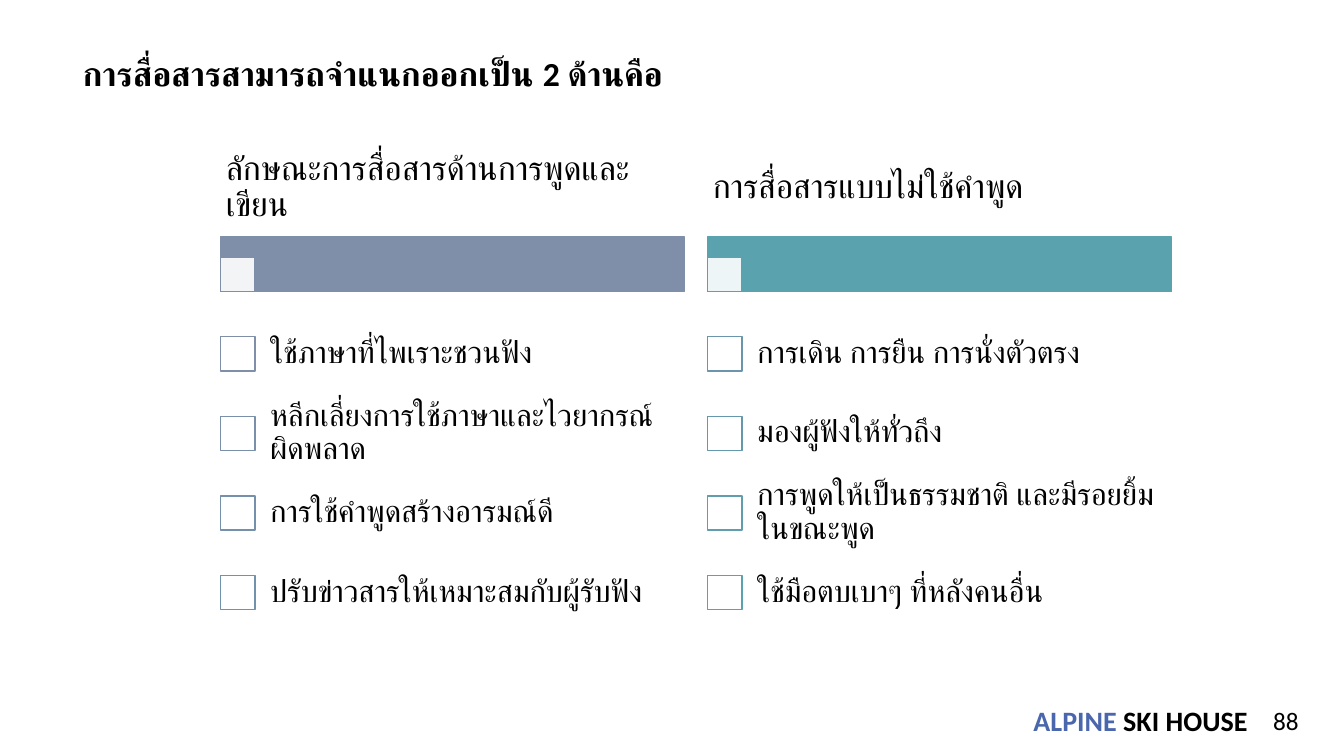
import pptx
import pptx.util
import pptx.dml.color
import pptx.enum.lang
import pptx.enum.shapes
import pptx.enum.text
import pptx.oxml

Inches = pptx.util.Inches
Pt = pptx.util.Pt
RGBColor = pptx.dml.color.RGBColor
ANCHOR = pptx.enum.text.MSO_ANCHOR
ALIGN = pptx.enum.text.PP_ALIGN
LANGUAGE = pptx.enum.lang.MSO_LANGUAGE_ID

BLACK = RGBColor(0x00, 0x00, 0x00)
WHITE = RGBColor(0xFF, 0xFF, 0xFF)
BRAND_BLUE = RGBColor(0x4A, 0x66, 0xAC)
SLATE = RGBColor(0x7F, 0x8F, 0xA9)
TEAL = RGBColor(0x5A, 0xA2, 0xAE)
SPEAKING_OUTLINES = [SLATE, RGBColor(0x7A, 0x8F, 0xA9),
                     RGBColor(0x75, 0x90, 0xAA), RGBColor(0x70, 0x92, 0xAB)]
NONVERBAL_OUTLINES = [RGBColor(0x6A, 0x95, 0xAB), RGBColor(0x65, 0x98, 0xAC),
                      RGBColor(0x60, 0x9D, 0xAD), TEAL]

presentation = pptx.Presentation()
presentation.slide_width = Inches(13.33)
presentation.slide_height = Inches(7.5)
slide = presentation.slides.add_slide(presentation.slide_layouts[5])


def write(box, runs, size, bold=False, align=ALIGN.LEFT, spacing=1.0,
          language=LANGUAGE.THAI, **frame_format):
    frame = box.text_frame
    frame_format = {"word_wrap": True, "vertical_anchor": ANCHOR.MIDDLE,
                    "auto_size": pptx.enum.text.MSO_AUTO_SIZE.NONE, **frame_format}
    for attribute, value in frame_format.items():
        setattr(frame, attribute, value)
    paragraph = frame.paragraphs[0]
    paragraph.alignment = align
    paragraph.line_spacing = spacing
    for words, color in runs:
        run = paragraph.add_run()
        run.text = words
        font_format = {"name": "Calibri", "size": Pt(size), "bold": bold,
                       "language_id": language}
        for attribute, value in font_format.items():
            setattr(run.font, attribute, value)
        run.font.color.rgb = color


def add_block(left, top, width, height, fill, outline):
    block = slide.shapes.add_shape(
        pptx.enum.shapes.MSO_SHAPE.RECTANGLE,
        Inches(left), Inches(top), Inches(width), Inches(height))
    block.shadow.inherit = False
    block.fill.solid()
    block.fill.fore_color.rgb = fill
    block.line.color.rgb = outline
    block.line.width = Pt(1)
    return block


title = slide.shapes.title
title.left, title.top = Inches(0.72), Inches(0.47)
title.width, title.height = Inches(6.34), Inches(0.5)
write(title, [("การสื่อสารสามารถจำแนกออกเป็น 2 ด้านคือ", BLACK)], 24, bold=True,
      vertical_anchor=ANCHOR.TOP)

footer = slide.shapes.add_textbox(Inches(10.23), Inches(6.96), Inches(2.18), Inches(0.38))
write(footer, [("ALPINE", BRAND_BLUE), (" SKI HOUSE", BLACK)], 20, bold=True,
      language=LANGUAGE.ENGLISH_US, word_wrap=False,
      **{f"margin_{side}": Inches(0.02) for side in ("left", "right", "top", "bottom")})

page_number = slide.shapes.add_textbox(Inches(12.42), Inches(6.95), Inches(0.56), Inches(0.4))
write(page_number, [("88", BLACK)], 18, align=ALIGN.RIGHT,
      language=LANGUAGE.ENGLISH_US, vertical_anchor=ANCHOR.TOP)

columns = [
    (2.19, SLATE, SPEAKING_OUTLINES, "ลักษณะการสื่อสารด้านการพูดและเขียน",
     ["ใช้ภาษาที่ไพเราะชวนฟัง",
      "หลีกเลี่ยงการใช้ภาษาและไวยากรณ์ผิดพลาด",
      "การใช้คำพูดสร้างอารมณ์ดี",
      "ปรับข่าวสารให้เหมาะสมกับผู้รับฟัง"]),
    (7.02, TEAL, NONVERBAL_OUTLINES, "การสื่อสารแบบไม่ใช้คำพูด",
     ["การเดิน การยืน การนั่งตัวตรง",
      "มองผู้ฟังให้ทั่วถึง",
      "การพูดให้เป็นธรรมชาติ และมีรอยยิ้มในขณะพูด",
      "ใช้มือตบเบาๆ ที่หลังคนอื่น"]),
]
COLUMN_WIDTH = 4.6
BOX_SIZE = 0.34
ROW_HEIGHT = 0.79
item_margins = {f"margin_{side}": Inches(0.17)
                for side in ("left", "right", "top", "bottom")}
heading_margins = {"margin_left": Inches(0.05), "margin_right": Inches(0.05),
                   "margin_top": Inches(0.03), "margin_bottom": Inches(0.03)}

for left, accent, outlines, heading_text, items in columns:
    add_block(left, 2.35, COLUMN_WIDTH, 0.54, accent, accent)
    corner = add_block(left, 2.55, BOX_SIZE, BOX_SIZE, WHITE, accent)
    fill_color = corner.fill._xPr.find(".//" + pptx.oxml.ns.qn("a:srgbClr"))
    pptx.oxml.xmlchemy.OxmlElement("a:alpha")
    alpha = pptx.oxml.xmlchemy.OxmlElement("a:alpha")
    alpha.set("val", "90000")
    fill_color.append(alpha)

    heading = slide.shapes.add_textbox(
        Inches(left), Inches(1.38), Inches(COLUMN_WIDTH), Inches(0.97))
    write(heading, [(heading_text, BLACK)], 24, spacing=0.9, **heading_margins)

    for row, (item, outline) in enumerate(zip(items, outlines)):
        top = 3.11 + row * ROW_HEIGHT
        add_block(left, top + 0.23, BOX_SIZE, BOX_SIZE, WHITE, outline)
        label = slide.shapes.add_textbox(
            Inches(left + 0.32), Inches(top), Inches(4.28), Inches(ROW_HEIGHT))
        write(label, [(item, BLACK)], 22, spacing=0.9, **item_margins)

presentation.save("out.pptx")
